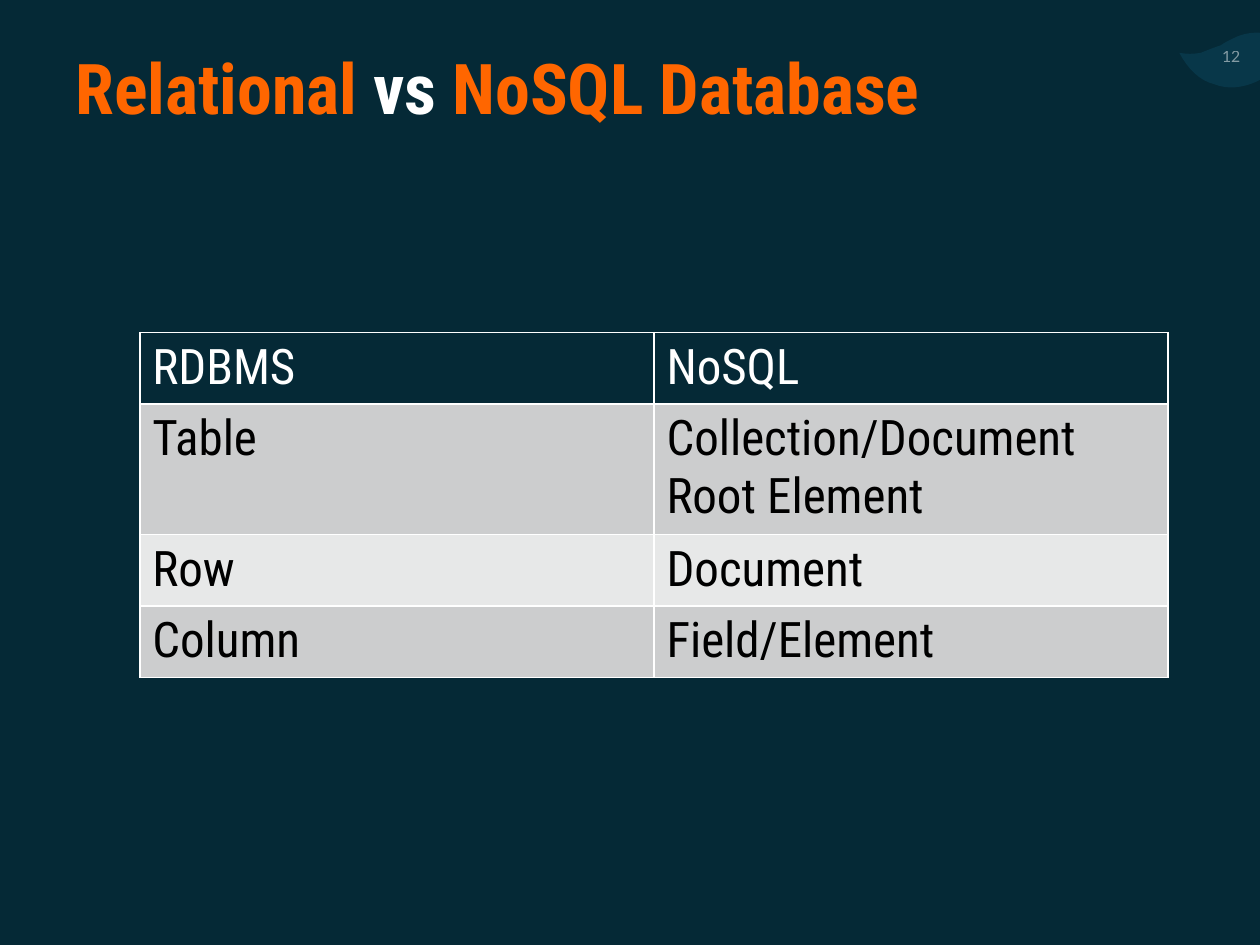
"""Builds the slide comparing relational and NoSQL database terms."""
from lxml import etree
from pptx import Presentation
from pptx.dml.color import RGBColor
from pptx.enum import text
from pptx.oxml import ns
from pptx.util import Inches, Pt

NAVY = RGBColor(0x05, 0x29, 0x36)
TEAL = RGBColor(0x08, 0x37, 0x49)
ORANGE = RGBColor(0xFF, 0x66, 0x00)
WHITE = RGBColor(0xFF, 0xFF, 0xFF)
BLACK = RGBColor(0, 0, 0)
GREY = RGBColor(0xCC, 0xCD, 0xCE)
PALE = RGBColor(0xE7, 0xE8, 0xE8)
HEAD_FONT = "Roboto Condensed"

TITLE = [("Relational ", ORANGE), ("vs", WHITE), (" NoSQL Database", ORANGE)]
PAGE_NUMBER = "12"
TERMS = [
    ("RDBMS", "NoSQL"),
    ("Table", "Collection/Document Root Element"),
    ("Row", "Document"),
    ("Column", "Field/Element"),
]
LEAF_START = (10.36, 0.55)
LEAF_CURVES = [
    ((10.33, 0.48), (10.28, 0.42), (10.23, 0.37)),
    ((10.18, 0.32), (10.12, 0.28), (10.05, 0.27)),
    ((9.98, 0.25), (9.9, 0.26), (9.82, 0.29)),
    ((9.78, 0.31), (9.73, 0.33), (9.69, 0.36)),
    ((9.63, 0.38), (9.58, 0.4), (9.53, 0.42)),
    ((9.47, 0.43), (9.42, 0.43), (9.36, 0.42)),
    ((9.43, 0.55), (9.52, 0.64), (9.64, 0.67)),
    ((9.74, 0.71), (9.86, 0.7), (9.97, 0.65)),
    ((10.03, 0.62), (10.08, 0.58), (10.14, 0.56)),
    ((10.22, 0.53), (10.29, 0.53), (10.36, 0.55)),
]


def style(span, font, size, color, bold=False):
    span.font.name, span.font.size, span.font.bold = font, Pt(size), bold
    span.font.color.rgb = color


def curve_points(start, curves, steps=8):
    for first, second, end in curves:
        corners = (start, first, second, end)
        for step in range(1, steps + 1):
            t = step / steps
            weights = ((1 - t) ** 3, 3 * t * (1 - t) ** 2, 3 * t * t * (1 - t), t ** 3)
            yield tuple(
                Inches(sum(w * c[axis] for w, c in zip(weights, corners))) for axis in (0, 1))
        start = end


def add_leaf(page):
    builder = page.shapes.build_freeform(*map(Inches, LEAF_START))
    builder.add_line_segments(list(curve_points(LEAF_START, LEAF_CURVES)), close=True)
    leaf = builder.convert_to_shape()
    leaf.shadow.inherit = False
    leaf.fill.solid()
    leaf.fill.fore_color.rgb = TEAL
    leaf.line.fill.background()


def add_box(page, left, top, width, height, wrap, anchor):
    box = page.shapes.add_textbox(*map(Inches, (left, top, width, height)))
    box.text_frame.word_wrap = wrap
    box.text_frame.vertical_anchor = anchor
    return box.text_frame


def add_page_number(page):
    frame = add_box(page, 9.6, 0.27, 0.31, 0.36, False, text.MSO_ANCHOR.MIDDLE)
    frame.margin_right = 0
    frame.text = PAGE_NUMBER
    span = frame.paragraphs[0].runs[0]
    style(span, "Lato", 9, WHITE)
    color = span.font.fill._xPr.find(".//" + ns.qn("a:srgbClr"))
    etree.SubElement(color, ns.qn("a:alpha"), val="50000")


def add_title(page):
    frame = add_box(page, 0.5, 0.38, 9.25, 1.25, True, text.MSO_ANCHOR.TOP)
    para = frame.paragraphs[0]
    para.line_spacing = 0.9
    for words, color in TITLE:
        span = para.add_run()
        span.text = words
        style(span, HEAD_FONT, 40, color, True)


def add_terms(page):
    frame = page.shapes.add_table(
        len(TERMS), 2, Inches(1.11), Inches(2.64), Inches(8.16), Inches(0.41 * len(TERMS)))
    for row, terms in enumerate(TERMS):
        header = row == 0
        fill = NAVY if header else (PALE, GREY)[row % 2]
        for column, term in enumerate(terms):
            cell = frame.table.cell(row, column)
            cell.text_frame.text = term
            style(cell.text_frame.paragraphs[0].runs[0], HEAD_FONT, 28, WHITE if header else BLACK)
            cell.fill.solid()
            cell.fill.fore_color.rgb = fill


def main():
    deck = Presentation()
    deck.slide_width, deck.slide_height = Inches(10), Inches(7.5)
    page = deck.slides.add_slide(deck.slide_layouts[6])
    page.background.fill.solid()
    page.background.fill.fore_color.rgb = NAVY
    add_leaf(page)
    add_page_number(page)
    add_title(page)
    add_terms(page)
    deck.save("out.pptx")


if __name__ == "__main__":
    main()
